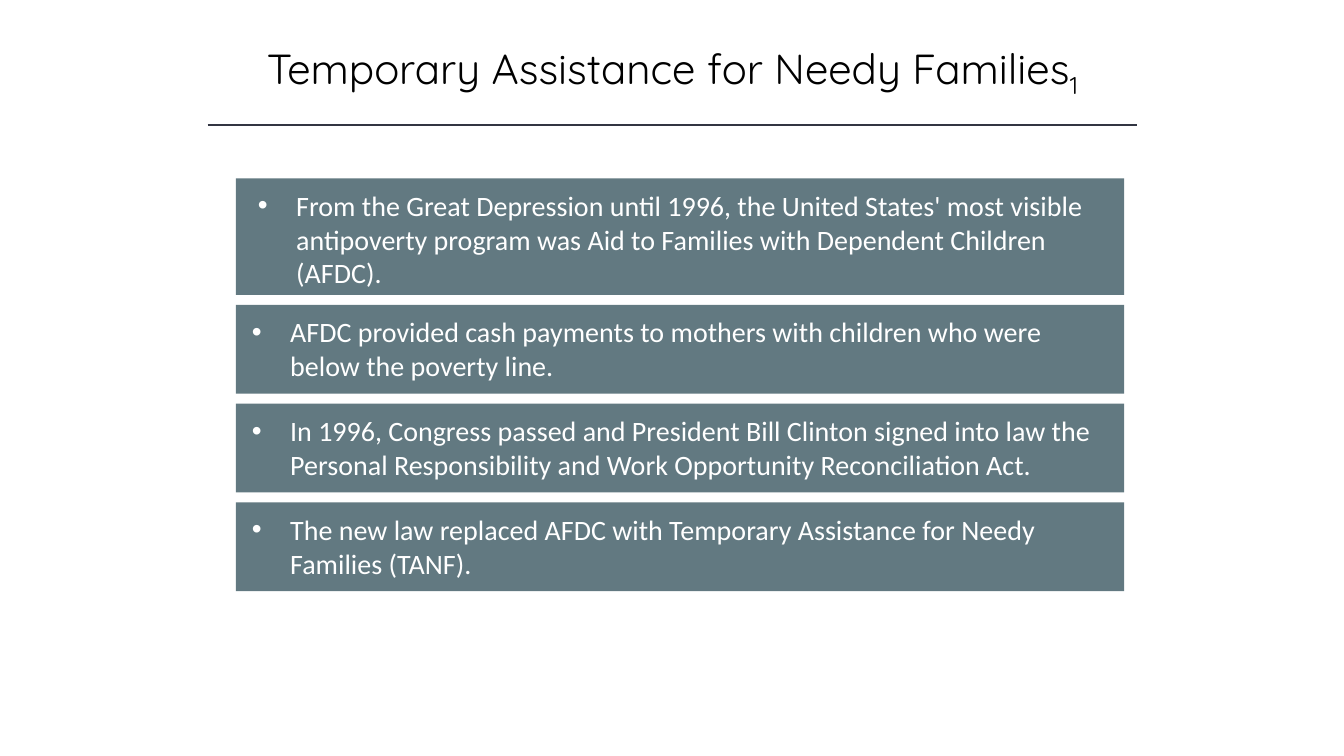
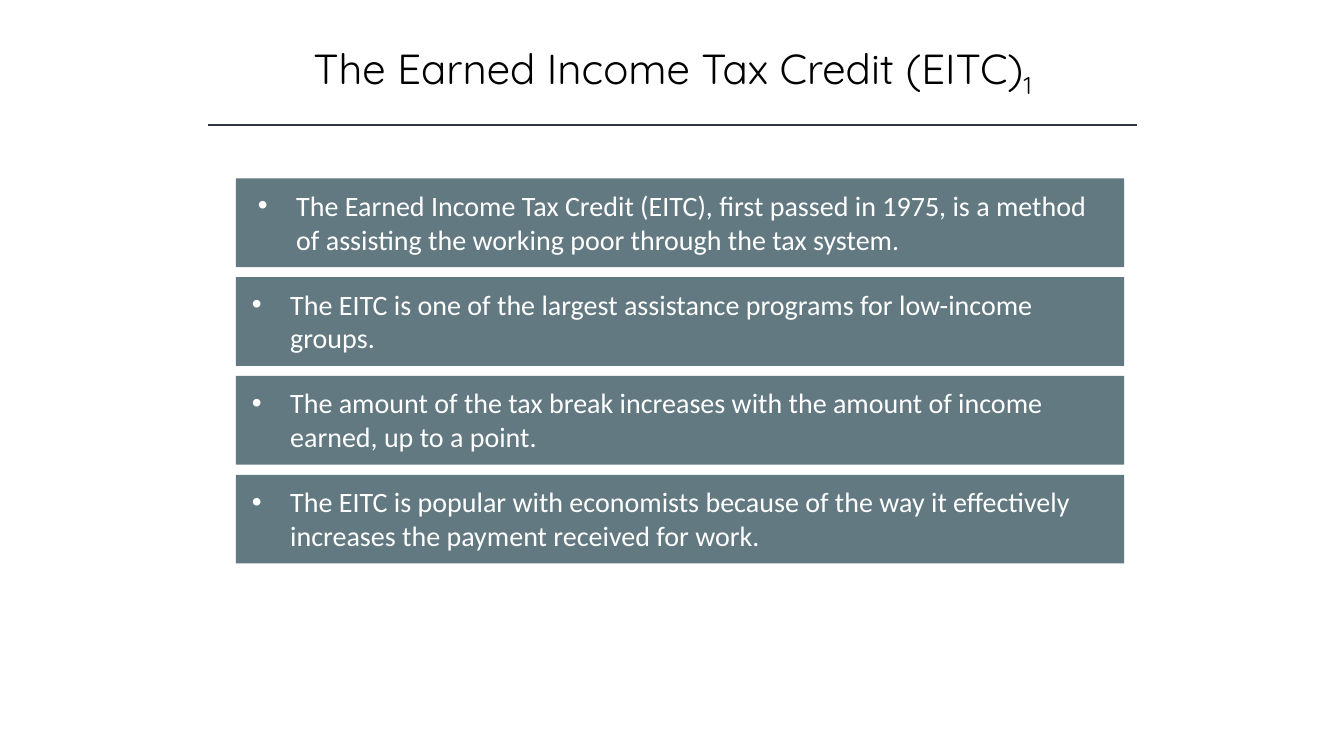
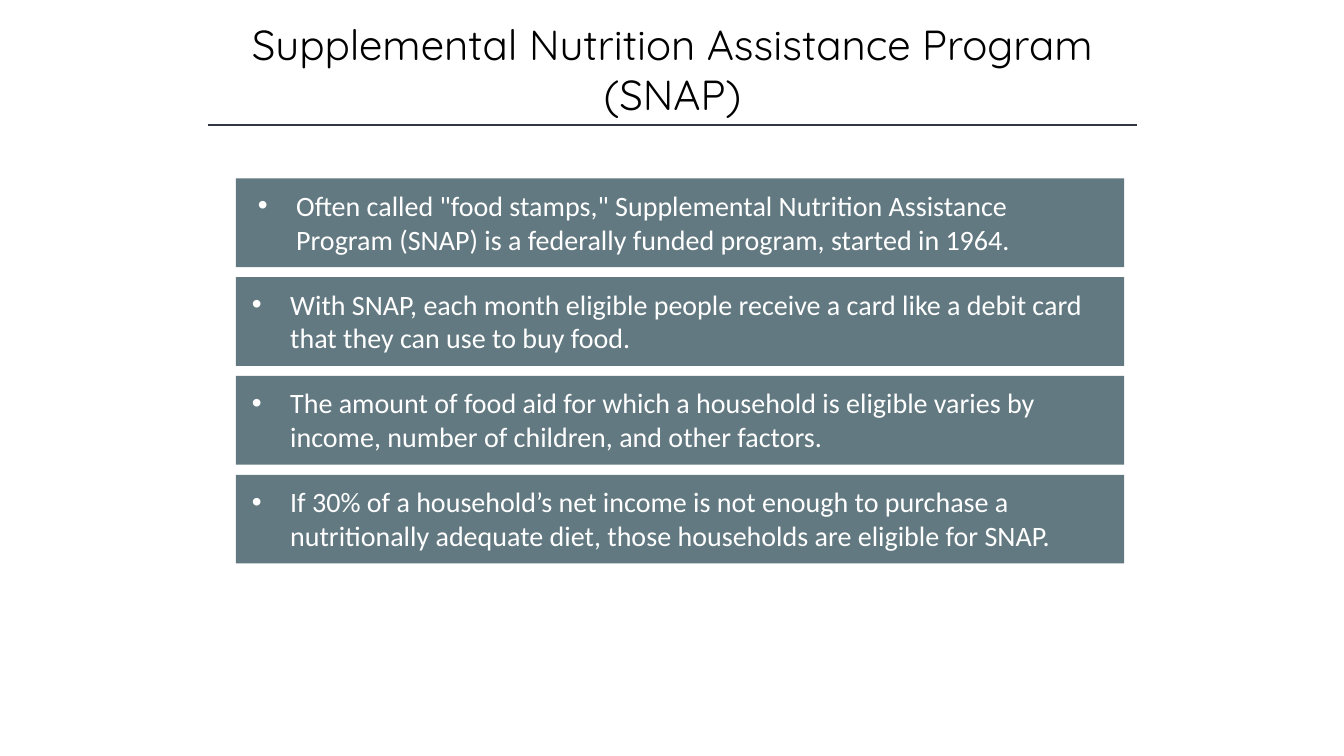
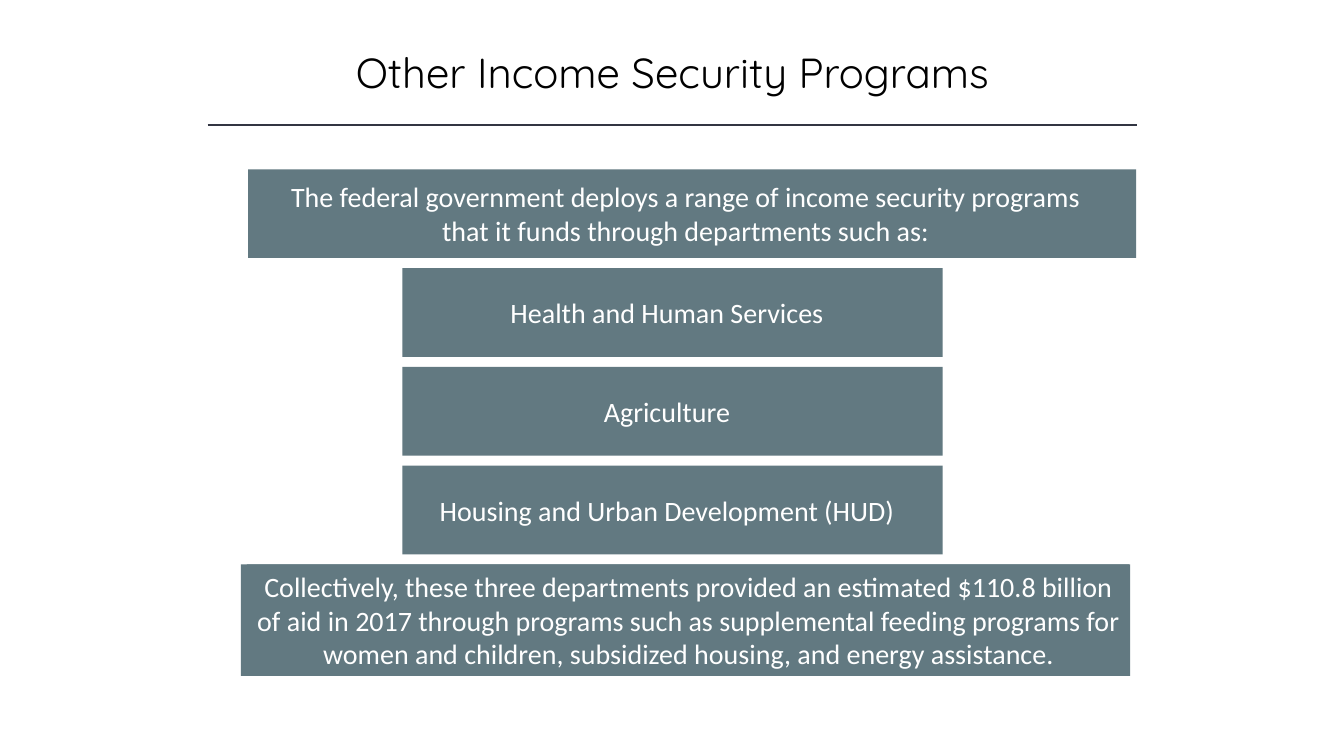
import pptx
import pptx.dml.color
import pptx.enum.shapes
import pptx.enum.text
import pptx.util
from lxml import etree
from pptx.oxml.ns import qn

# Shared style
TITLE_FONT, BODY_FONT = "Quicksand", "Calibri"
BLACK, WHITE, SLATE, RULE = "000000", "FFFFFF", "627981", "323542"
SLIDE_WIDTH, SLIDE_HEIGHT = 13.33, 7.5
TITLE_LEFT, TITLE_WIDTH = 1.67, 10
RULE_LEFT, RULE_RIGHT, RULE_TOP = 2.06, 11.28, 1.24
BAND_HEIGHT, BAND_GAP = 0.88, 0.1
LINE_HEIGHT, TEXT_PADDING, LABEL_DROP = 0.335, 0.1, 0.05
BULLET_INDENT = 0.38

# Columns: band left, band width, label inset, label width
FIRST_BULLET = (2.34, 8.81, 0.12, 8.54)
BULLET = (2.34, 8.81, 0.06, 8.54)
INTRO = (2.46, 8.81, 0.07, 8.54)
DEPARTMENT = (3.99, 5.36, 0.03, 5.19)
SUMMARY = (2.39, 8.81, 0.06, 8.76)

# Content: each band is text, number of lines, column
SLIDES = [
    dict(title="Temporary Assistance for Needy Families", subscript="1",
         title_top=0.37, title_height=0.61, bands_top=1.77, bulleted=True, bands=[
             ("From the Great Depression until 1996, the United States' most visible antipoverty "
              "program was Aid to Families with Dependent Children (AFDC).", 3, FIRST_BULLET),
             ("AFDC provided cash payments to mothers with children who were below the "
              "poverty line.", 2, BULLET),
             ("In 1996, Congress passed and President Bill Clinton signed into law the Personal "
              "Responsibility and Work Opportunity Reconciliation Act.", 2, BULLET),
             ("The new law replaced AFDC with Temporary Assistance for Needy Families (TANF).",
              2, BULLET)]),
    dict(title="The Earned Income Tax Credit (EITC)", subscript="1",
         title_top=0.37, title_height=0.61, bands_top=1.77, bulleted=True, bands=[
             ("The Earned Income Tax Credit (EITC), first passed in 1975, is a method of "
              "assisting the working poor through the tax system.", 2, FIRST_BULLET),
             ("The EITC is one of the largest assistance programs for low-income groups.",
              2, BULLET),
             ("The amount of the tax break increases with the amount of income earned, up to "
              "a point.", 2, BULLET),
             ("The EITC is popular with economists because of the way it effectively increases "
              "the payment received for work.", 2, BULLET)]),
    dict(title="Supplemental Nutrition Assistance Program (SNAP)", subscript="",
         title_top=0.13, title_height=1.11, bands_top=1.77, bulleted=True, bands=[
             ("Often called \"food stamps,\" Supplemental Nutrition Assistance Program (SNAP) is "
              "a federally funded program, started in 1964.", 2, FIRST_BULLET),
             ("With SNAP, each month eligible people receive a card like a debit card that they "
              "can use to buy food.", 2, BULLET),
             ("The amount of food aid for which a household is eligible varies by income, number "
              "of children, and other factors.", 2, BULLET),
             ("If 30% of a household’s net income is not enough to purchase a nutritionally "
              "adequate diet, those households are eligible for SNAP.", 2, BULLET)]),
    dict(title="Other Income Security Programs", subscript="",
         title_top=0.41, title_height=0.61, bands_top=1.68, bulleted=False, bands=[
             ("The federal government deploys a range of income security programs that it funds "
              "through departments such as:", 2, INTRO),
             ("Health and Human Services", 1, DEPARTMENT),
             ("Agriculture", 1, DEPARTMENT),
             ("Housing and Urban Development (HUD)", 1, DEPARTMENT),
             ("Collectively, these three departments provided an estimated $110.8 billion of aid "
              "in 2017 through programs such as supplemental feeding programs for women and "
              "children, subsidized housing, and energy assistance.", 3, SUMMARY)]),
]


def inches(*lengths):
    return [pptx.util.Inches(length) for length in lengths]


def color(value):
    return pptx.dml.color.RGBColor.from_string(value)


def write_text(shape, text, subscript="", font=BODY_FONT, size=20, ink=WHITE, bulleted=False):
    """Fill a shape with one paragraph, bulleted or centred."""
    frame = shape.text_frame
    frame.word_wrap = True
    frame.auto_size = pptx.enum.text.MSO_AUTO_SIZE.SHAPE_TO_FIT_TEXT
    frame.vertical_anchor = pptx.enum.text.MSO_ANCHOR.TOP
    paragraph = frame.paragraphs[0]
    alignment = pptx.enum.text.PP_ALIGN
    paragraph.alignment = alignment.LEFT if bulleted else alignment.CENTER
    if bulleted:
        properties = paragraph._p.get_or_add_pPr()
        indent = pptx.util.Inches(BULLET_INDENT)
        properties.set("marL", str(indent))
        properties.set("indent", str(-indent))
        etree.SubElement(properties, qn("a:buFont"), typeface="Arial")
        etree.SubElement(properties, qn("a:buChar"), char="•")
    for content in filter(None, (text, subscript)):
        run = paragraph.add_run()
        run.text = content
        run.font.name, run.font.size = font, pptx.util.Pt(size)
        run.font.color.rgb = color(ink)
    if subscript:
        run._r.get_or_add_rPr().set("baseline", "-25000")


def add_rectangle(shapes, left, top, width, height):
    rectangle = shapes.add_shape(pptx.enum.shapes.MSO_SHAPE.RECTANGLE,
                                 *inches(left, top, width, height))
    rectangle.shadow.inherit = False
    rectangle.fill.solid()
    rectangle.fill.fore_color.rgb = color(SLATE)
    rectangle.line.fill.background()
    return rectangle


def add_heading(slide, content):
    """Title with the rule below it."""
    title = slide.shapes.title
    title.left, title.top, title.width, title.height = inches(
        TITLE_LEFT, content["title_top"], TITLE_WIDTH, content["title_height"])
    write_text(title, content["title"], content["subscript"],
               font=TITLE_FONT, size=30, ink=BLACK)
    rule = slide.shapes.add_connector(pptx.enum.shapes.MSO_CONNECTOR.STRAIGHT,
                                      *inches(RULE_LEFT, RULE_TOP, RULE_RIGHT, RULE_TOP))
    rule.line.color.rgb = color(RULE)
    rule.line.width = pptx.util.Pt(1)
    etree.SubElement(rule._element.spPr, qn("a:effectLst"))


def add_bands(slide, content):
    """Stack of bands, each a panel grouped with its label."""
    top, bulleted = content["bands_top"], content["bulleted"]
    for text, lines, (left, width, inset, label_width) in content["bands"]:
        label_height = TEXT_PADDING + lines * LINE_HEIGHT
        height = max(BAND_HEIGHT, label_height + (LABEL_DROP if bulleted else 0))
        drop = LABEL_DROP if bulleted else (height - label_height) / 2
        band = slide.shapes.add_group_shape()
        add_rectangle(band.shapes, left, top, width, height)
        label = add_rectangle(band.shapes, left + inset, top + drop, label_width, label_height)
        write_text(label, text, bulleted=bulleted)
        top += height + BAND_GAP


def main():
    presentation = pptx.Presentation()
    presentation.slide_width, presentation.slide_height = inches(SLIDE_WIDTH, SLIDE_HEIGHT)
    title_only = presentation.slide_layouts[5]
    for content in SLIDES:
        slide = presentation.slides.add_slide(title_only)
        add_heading(slide, content)
        add_bands(slide, content)
    presentation.save("out.pptx")


if __name__ == "__main__":
    main()
